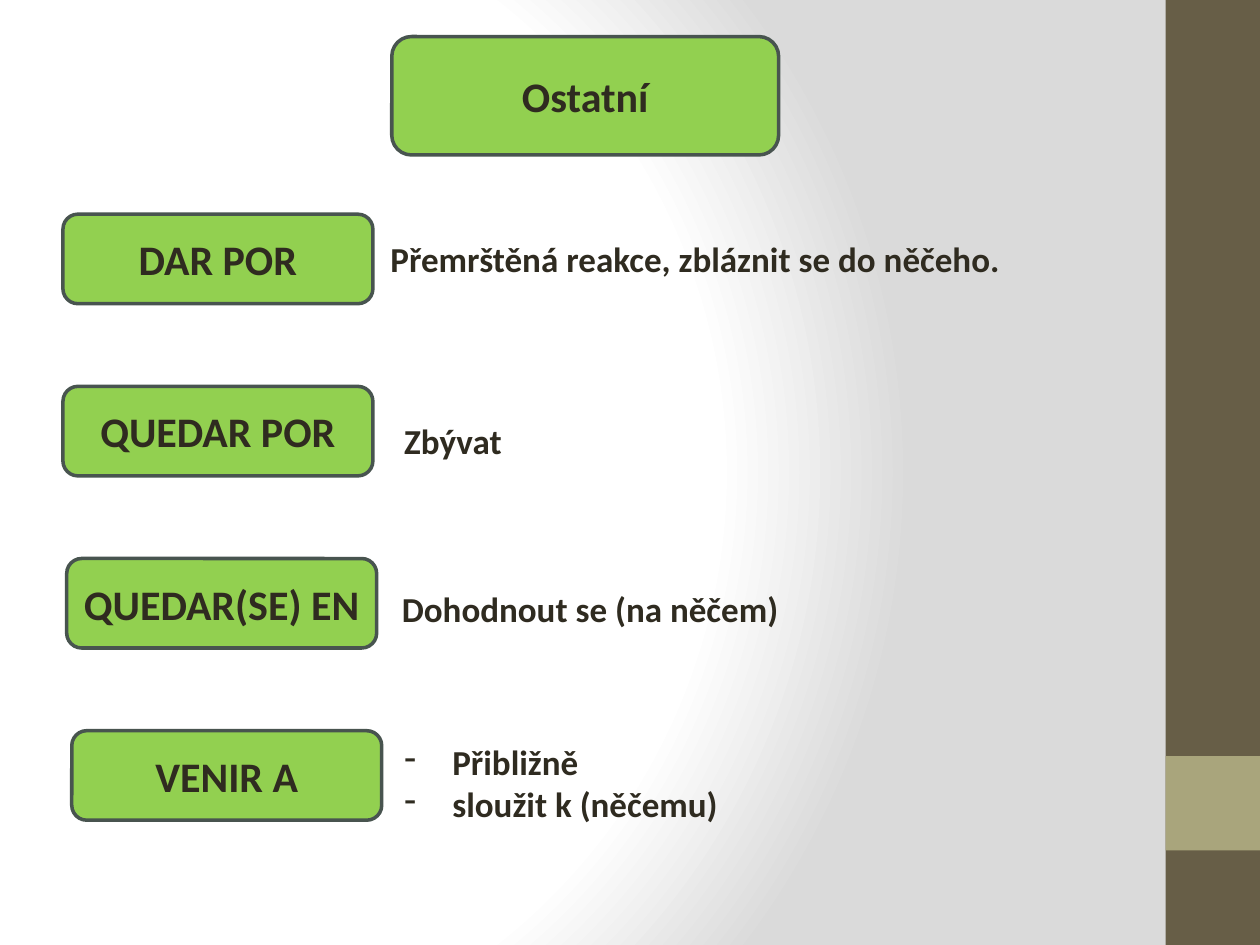
from dataclasses import dataclass

from lxml import etree
from pptx import Presentation
from pptx.dml.color import RGBColor
from pptx.enum.shapes import MSO_SHAPE
from pptx.enum.text import MSO_ANCHOR, MSO_AUTO_SIZE, PP_ALIGN
from pptx.oxml.ns import qn
from pptx.util import Inches, Pt

RECTANGLE = MSO_SHAPE.RECTANGLE
ROUNDED = MSO_SHAPE.ROUNDED_RECTANGLE
MIDDLE, TOP = MSO_ANCHOR.MIDDLE, MSO_ANCHOR.TOP
GROW = MSO_AUTO_SIZE.SHAPE_TO_FIT_TEXT
CENTER, LEFT = PP_ALIGN.CENTER, PP_ALIGN.LEFT

SLIDE_WIDTH, SLIDE_HEIGHT = Inches(10), Inches(7.5)
FIRST_ROW, ROW_PITCH = 22.67, 18.22
LABEL_WIDTH, LABEL_HEIGHT = 24.6, 9.47
BULLET_INDENT = Inches(0.38)


@dataclass(frozen=True)
class Theme:
    font: str = "Calibri"
    label_size: int = 24
    meaning_size: int = 20
    text: str = "2F2B20"
    label: str = "92D050"
    outline: str = "48544F"
    sidebar: str = "675E47"
    accent: str = "A9A57C"
    background: tuple = ((0, "FFFFFF"), (75, "FFFFFF"), (100, "DADADA"))


THEME = Theme()
TERMS = [
    ("DAR POR", 5),
    ("QUEDAR POR", 5),
    ("QUEDAR(SE) EN", 5.3),
    ("VENIR A", 5.7),
]
MEANINGS = [
    ("Přemrštěná reakce, zbláznit se do něčeho.", (30, 24.53, 50.8, 5.87)),
    ("Zbývat", (31.1, 43.73, 9.8, 5.87)),
    ("Dohodnout se (na něčem)", (30.9, 61.47, 32.2, 5.87)),
]
LIST_ITEMS = ["Přibližně", "sloužit k (něčemu)"]


def to_lengths(box):
    left, top, width, height = box
    return (
        int(SLIDE_WIDTH * left / 100),
        int(SLIDE_HEIGHT * top / 100),
        int(SLIDE_WIDTH * width / 100),
        int(SLIDE_HEIGHT * height / 100),
    )


def paint_background(slide):
    slide.background.fill.solid()
    solid = next(slide.element.iter(qn("a:solidFill")))
    gradient = etree.Element(qn("a:gradFill"), rotWithShape="1")
    stops = etree.SubElement(gradient, qn("a:gsLst"))
    for position, color in THEME.background:
        stop = etree.SubElement(stops, qn("a:gs"), pos=str(position * 1000))
        etree.SubElement(stop, qn("a:srgbClr"), val=color)
    circle = etree.SubElement(gradient, qn("a:path"), path="circle")
    etree.SubElement(circle, qn("a:fillToRect"), l="20000", t="50000", r="100000", b="50000")
    solid.getparent().replace(solid, gradient)


def write_text(paragraph, text, size, align=LEFT):
    paragraph.alignment = align
    paragraph.space_before = Pt(0)
    run = paragraph.add_run()
    run.text = text
    run.font.name = THEME.font
    run.font.size = Pt(size)
    run.font.bold = True
    run.font.color.rgb = RGBColor.from_string(THEME.text)


def add_block(slide, kind, box, fill):
    shape = slide.shapes.add_shape(kind, *to_lengths(box))
    shape.shadow.inherit = False
    shape.fill.solid()
    shape.fill.fore_color.rgb = RGBColor.from_string(fill)
    shape.line.fill.background()
    return shape


def add_label(slide, text, box):
    shape = add_block(slide, ROUNDED, box, THEME.label)
    shape.line.color.rgb = RGBColor.from_string(THEME.outline)
    shape.line.width = Pt(2)
    frame = shape.text_frame
    frame.vertical_anchor = MIDDLE
    write_text(frame.paragraphs[0], text, THEME.label_size, align=CENTER)


def add_meaning(slide, text, box):
    frame = slide.shapes.add_textbox(*to_lengths(box)).text_frame
    frame.word_wrap = False
    frame.auto_size = GROW
    write_text(frame.paragraphs[0], text, THEME.meaning_size)


def fill_list(placeholder, items, box):
    placeholder.left, placeholder.top, placeholder.width, placeholder.height = to_lengths(box)
    frame = placeholder.text_frame
    frame.word_wrap = True
    frame.auto_size = GROW
    frame.vertical_anchor = TOP
    for index, item in enumerate(items):
        paragraph = frame.add_paragraph() if index else frame.paragraphs[0]
        write_text(paragraph, item, THEME.meaning_size)
        properties = paragraph._p.get_or_add_pPr()
        properties.set("marL", str(BULLET_INDENT))
        properties.set("indent", str(-BULLET_INDENT))
        etree.SubElement(properties, qn("a:buFontTx"))
        etree.SubElement(properties, qn("a:buChar"), char="-")


def main():
    presentation = Presentation()
    presentation.slide_width, presentation.slide_height = SLIDE_WIDTH, SLIDE_HEIGHT
    slide = presentation.slides.add_slide(presentation.slide_layouts[1])
    title = slide.shapes.title.element
    title.getparent().remove(title)

    paint_background(slide)
    add_block(slide, RECTANGLE, (92.5, 0, 7.5, 100), THEME.sidebar)
    add_block(slide, RECTANGLE, (92.5, 80, 7.5, 10), THEME.accent)
    add_label(slide, "Ostatní", (31.1, 3.87, 30.7, 12.53))
    for row, (term, left) in enumerate(TERMS):
        add_label(slide, term, (left, FIRST_ROW + row * ROW_PITCH, LABEL_WIDTH, LABEL_HEIGHT))
    for meaning, box in MEANINGS:
        add_meaning(slide, meaning, box)
    fill_list(slide.placeholders[1], LIST_ITEMS, (31.1, 77.73, 46.5, 10.27))
    presentation.save("out.pptx")


if __name__ == "__main__":
    main()
